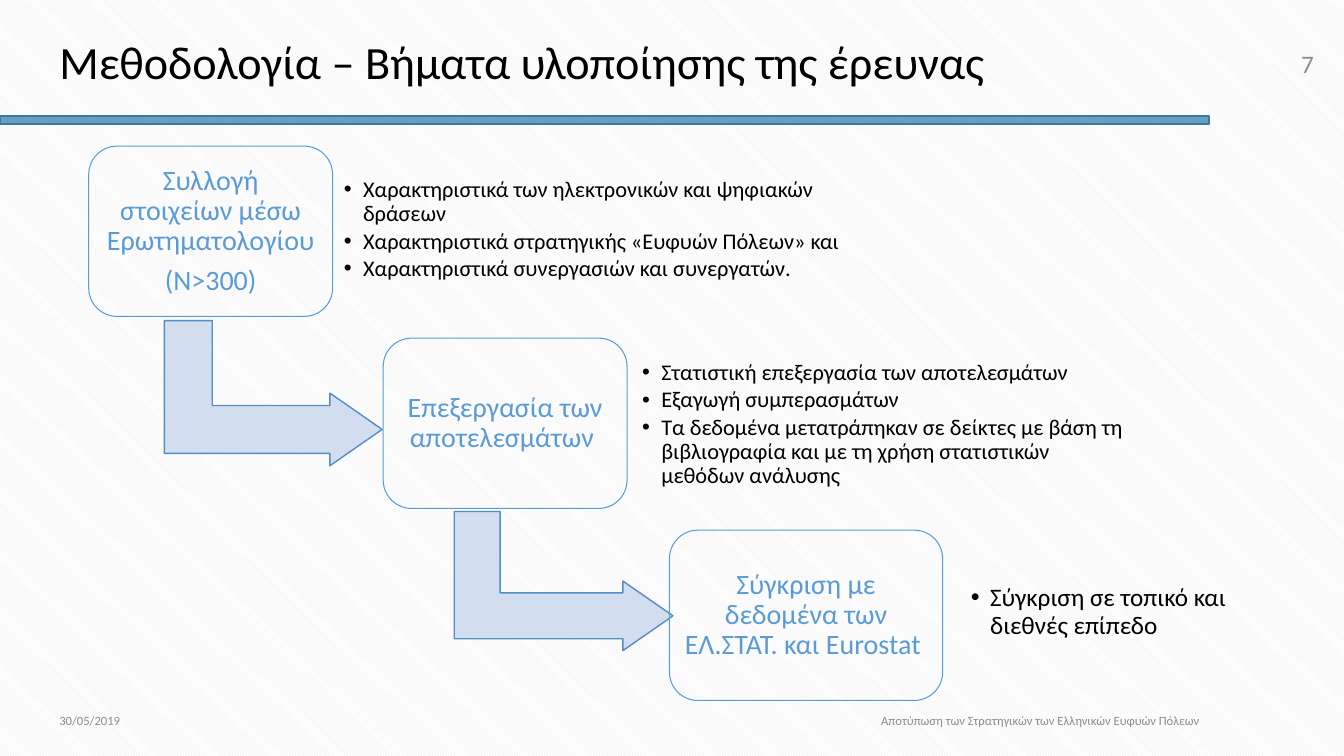
from dataclasses import dataclass
from typing import Optional

import pptx
import pptx.dml.color
import pptx.enum.dml
import pptx.enum.shapes
import pptx.enum.text
import pptx.oxml
import pptx.oxml.ns
import pptx.util

Inches, Pt = pptx.util.Inches, pptx.util.Pt
MSO_SHAPE = pptx.enum.shapes.MSO_SHAPE
ALIGN = pptx.enum.text.PP_ALIGN


@dataclass(frozen=True)
class Theme:
    font: str = "Calibri"
    text: str = "000000"
    muted: str = "8C8C8C"
    accent: str = "5B9BD5"
    bar: str = "66A2BF"
    bar_line: str = "43739E"
    arrow: str = "D2DEEF"
    arrow_line: str = "538DC1"
    paper: str = "FFFFFF"
    hatch: str = "E7E6E6"
    title_size: int = 33
    step_size: int = 20
    number_size: int = 18
    detail_size: int = 16
    last_detail_size: int = 18
    footer_size: int = 9


@dataclass(frozen=True)
class Area:
    """A rectangle in percent of the slide's width and height."""
    x: float
    y: float
    w: float
    h: float

    def emu(self) -> tuple[int, int, int, int]:
        return (int(SLIDE_W * self.x / 100), int(SLIDE_H * self.y / 100),
                int(SLIDE_W * self.w / 100), int(SLIDE_H * self.h / 100))


@dataclass(frozen=True)
class Step:
    x: float
    w: float
    label: list[str]
    details: list[str]
    details_area: Area
    details_size: int
    arrow: Optional[Area] = None


THEME = Theme()
SLIDE_W, SLIDE_H = Inches(13.33), Inches(7.5)
FIRST_ROW, ROW_STEP, STEP_H = 19.33, 25.4, 22.53
BULLET_INDENT = Inches(0.19)

STEPS = [
    Step(6.6, 18.15,
         ["Συλλογή στοιχείων μέσω Ερωτηματολογίου", "(Ν>300)"],
         ["Χαρακτηριστικά των ηλεκτρονικών και ψηφιακών δράσεων",
          "Χαρακτηριστικά στρατηγικής «Ευφυών Πόλεων» και",
          "Χαρακτηριστικά συνεργασιών και συνεργατών."],
         Area(25.06, 19.87, 40.5, 21.07), THEME.detail_size,
         Area(14.93, 37.6, 10.8, 28.8)),
    Step(28.51, 18.15,
         ["Επεξεργασία των αποτελεσμάτων "],
         ["Στατιστική επεξεργασία των αποτελεσμάτων",
          "Εξαγωγή συμπερασμάτων",
          "Τα δεδομένα μετατράπηκαν σε δείκτες με βάση τη βιβλιογραφία "
          "και με τη χρήση στατιστικών μεθόδων ανάλυσης"],
         Area(47.26, 47.07, 36.83, 18.27), THEME.detail_size,
         Area(36.76, 62.4, 10.35, 28.93)),
    Step(49.81, 20.33,
         ["Σύγκριση με δεδομένα των ΕΛ.ΣΤΑΤ. και Eurostat "],
         ["Σύγκριση σε τοπικό και διεθνές επίπεδο"],
         Area(71.72, 71.87, 21.68, 18.27), THEME.last_detail_size),
]


def rgb(value: str) -> pptx.dml.color.RGBColor:
    return pptx.dml.color.RGBColor.from_string(value)


def add_bullet(p) -> None:
    pPr = p._p.get_or_add_pPr()
    pPr.set("marL", str(BULLET_INDENT))
    pPr.set("indent", str(-BULLET_INDENT))
    ns = pptx.oxml.ns.nsdecls("a")
    pPr.append(pptx.oxml.parse_xml(f'<a:buFont {ns} typeface="Arial"/>'))
    pPr.append(pptx.oxml.parse_xml(f'<a:buChar {ns} char="•"/>'))


def write(sp, lines: list[str], *, size: int, color: str = THEME.text,
          align=ALIGN.LEFT, spacing: float = 1.0, after: float = 0,
          inset: Optional[float] = None, bullets: bool = False) -> None:
    tf = sp.text_frame
    tf.word_wrap = True
    tf.vertical_anchor = pptx.enum.text.MSO_ANCHOR.MIDDLE
    if inset is not None:
        tf.margin_left = tf.margin_right = Inches(inset)
        tf.margin_top = tf.margin_bottom = Inches(inset)
    for i, line in enumerate(lines):
        p = tf.paragraphs[0] if i == 0 else tf.add_paragraph()
        p.alignment = align
        p.line_spacing = spacing
        p.space_after = Pt(after)
        if bullets:
            add_bullet(p)
        r = p.add_run()
        r.text = line
        r.font.name = THEME.font
        r.font.size = Pt(size)
        r.font.color.rgb = rgb(color)


def add_text(slide, area: Area, lines: list[str], **fmt) -> None:
    write(slide.shapes.add_textbox(*area.emu()), lines, **fmt)


def add_figure(slide, kind, area: Area, *, line: str, width: float = 1,
               fill: Optional[str] = None):
    sp = slide.shapes.add_shape(kind, *area.emu())
    sp.shadow.inherit = False
    if fill:
        sp.fill.solid()
        sp.fill.fore_color.rgb = rgb(fill)
    else:
        sp.fill.background()
    sp.line.color.rgb = rgb(line)
    sp.line.width = Pt(width)
    return sp


def add_step(slide, step: Step, row: int) -> None:
    if step.arrow:
        arrow = add_figure(slide, MSO_SHAPE.BENT_UP_ARROW, step.arrow,
                           fill=THEME.arrow, line=THEME.arrow_line)
        arrow.rotation = 90
        for i, value in enumerate((0.33, 0.25, 0.36)):
            arrow.adjustments[i] = value
    area = Area(step.x, FIRST_ROW + row * ROW_STEP, step.w, STEP_H)
    box = add_figure(slide, MSO_SHAPE.ROUNDED_RECTANGLE, area,
                     line=THEME.accent, width=0.75)
    write(box, step.label, size=THEME.step_size, color=THEME.accent,
          align=ALIGN.CENTER, spacing=0.9, after=7, inset=0.07)
    add_text(slide, step.details_area, step.details, size=step.details_size,
             spacing=0.9, after=2.4, inset=0.07, bullets=True)


def paint_background(slide) -> None:
    fill = slide.background.fill
    fill.patterned()
    fill.pattern = pptx.enum.dml.MSO_PATTERN.LIGHT_DOWNWARD_DIAGONAL
    fill.fore_color.rgb = rgb(THEME.hatch)
    fill.back_color.rgb = rgb(THEME.paper)


def main() -> None:
    prs = pptx.Presentation()
    prs.slide_width, prs.slide_height = SLIDE_W, SLIDE_H
    slide = prs.slides.add_slide(prs.slide_layouts[6])
    paint_background(slide)
    add_figure(slide, MSO_SHAPE.RECTANGLE, Area(0, 15.33, 89.95, 1.07),
               fill=THEME.bar, line=THEME.bar_line)
    add_text(slide, Area(93.17, 1.73, 5.33, 13.33), ["7"],
             size=THEME.number_size, color=THEME.muted, align=ALIGN.RIGHT)
    for row, step in enumerate(STEPS):
        add_step(slide, step, row)
    add_text(slide, Area(3.68, 1.87, 86.27, 13.33),
             ["Μεθοδολογία – Βήματα υλοποίησης της έρευνας"],
             size=THEME.title_size, spacing=0.9)
    add_text(slide, Area(3.68, 92.67, 12.6, 5.33), ["30/05/2019"],
             size=THEME.footer_size, color=THEME.muted)
    add_text(slide, Area(24.61, 92.67, 65.34, 5.33),
             ["Αποτύπωση των Στρατηγικών των Ελληνικών Ευφυών Πόλεων"],
             size=THEME.footer_size, color=THEME.muted, align=ALIGN.RIGHT)
    prs.save("out.pptx")


if __name__ == "__main__":
    main()
